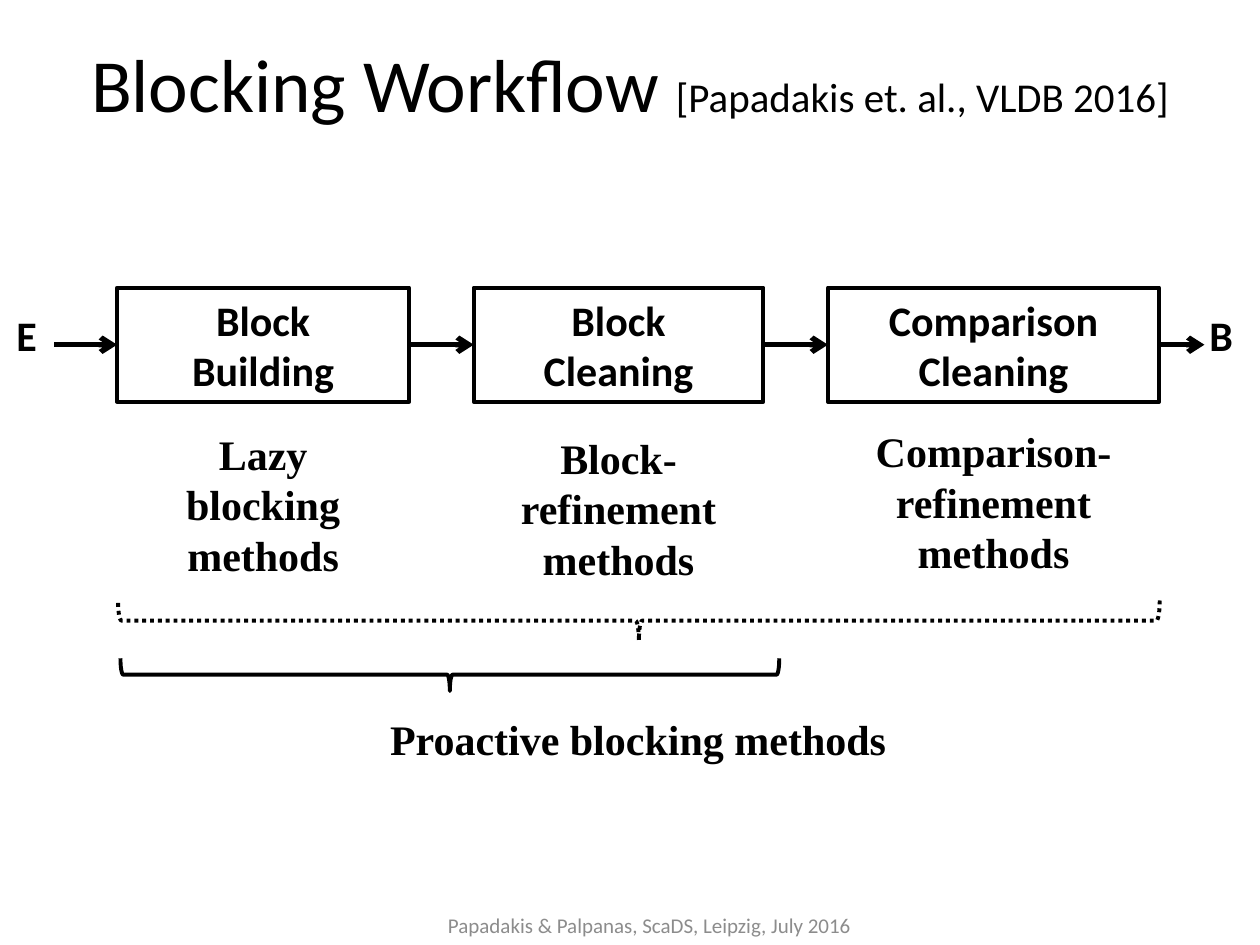
from dataclasses import dataclass

from lxml import etree
from pptx import Presentation, util as u
from pptx.dml.color import RGBColor
from pptx.enum import dml, shapes, text
from pptx.oxml import ns


@dataclass(frozen=True)
class Theme:
    """Colours, fonts and sizes of the slide."""
    ink: RGBColor = RGBColor(0, 0, 0)
    muted: RGBColor = RGBColor(0x8C, 0x8C, 0x8C)
    sans: str = "Calibri"
    serif: str = "Times New Roman"
    title: float = 42.9
    citation: float = 23.4
    body: float = 24
    footer: float = 12
    outline: float = 2.25
    arrow: float = 3


THEME = Theme()
CENTER = text.PP_ALIGN.CENTER
TOP = text.MSO_ANCHOR.TOP
MIDDLE = text.MSO_ANCHOR.MIDDLE
STAGE_TOP, STAGE_HEIGHT = 5.8, 2.3
FLOW_Y = STAGE_TOP + STAGE_HEIGHT / 2
STAGES = [
    (2.36, 5.89, ["Block", "Building"], 8.51, ["Lazy", "blocking", "methods"]),
    (9.55, 5.84, ["Block", "Cleaning"], 8.59, ["Block-refinement", "methods"]),
    (16.69, 6.68, ["Comparison", "Cleaning"], 8.46,
     ["Comparison-refinement", "methods"]),
]


def apply(target, **values):
    """Set each given attribute on the target."""
    for attribute, value in values.items():
        setattr(target, attribute, value)


def style_run(run, size, face=THEME.sans, bold=False, color=THEME.ink):
    """Format the font of one run."""
    apply(run.font, size=u.Pt(size), name=face, bold=bold)
    run.font.color.rgb = color


def write(frame, lines, align=CENTER, anchor=TOP, **style):
    """Write one paragraph per line into a text frame."""
    apply(frame, word_wrap=True, vertical_anchor=anchor)
    for index, line in enumerate(lines):
        paragraph = frame.add_paragraph() if index else frame.paragraphs[0]
        paragraph.alignment = align
        run = paragraph.add_run()
        run.text = line
        style_run(run, **style)


def add_label(slide, place, lines, **style):
    """Add a text box at a place given in centimetres."""
    label = slide.shapes.add_textbox(*map(u.Cm, place))
    write(label.text_frame, lines, **style)


def add_outline(slide, kind, place, dash=None):
    """Add an unfilled preset shape with a black outline."""
    outline = slide.shapes.add_shape(kind, *map(u.Cm, place))
    outline.shadow.inherit = False
    outline.fill.background()
    outline.line.color.rgb = THEME.ink
    apply(outline.line, width=u.Pt(THEME.outline), dash_style=dash)
    return outline


def add_stage(slide, left, width, lines):
    """Add one step of the workflow."""
    stage = add_outline(slide, shapes.MSO_SHAPE.RECTANGLE,
                        (left, STAGE_TOP, width, STAGE_HEIGHT))
    write(stage.text_frame, lines, anchor=MIDDLE, size=THEME.body, bold=True)
    return stage


def add_brace(slide, center_x, center_y, span, depth, dash=None):
    """Add a brace that points down, placed by its centre."""
    brace = add_outline(slide, shapes.MSO_SHAPE.LEFT_BRACE,
                        (center_x - depth / 2, center_y - span / 2, depth, span),
                        dash)
    brace.rotation = 270


def add_arrow(slide, start_x=0, end_x=0, source=None, target=None):
    """Add a flow arrow, joined to the stages it touches."""
    arrow = slide.shapes.add_connector(
        shapes.MSO_CONNECTOR.STRAIGHT,
        *map(u.Cm, (start_x, FLOW_Y, end_x, FLOW_Y)))
    if source:
        arrow.begin_connect(source, 3)
    if target:
        arrow.end_connect(target, 1)
    arrow.line.color.rgb = THEME.ink
    arrow.line.width = u.Pt(THEME.arrow)
    etree.SubElement(arrow.line._get_or_add_ln(), ns.qn("a:tailEnd"), type="arrow")
    etree.SubElement(arrow._element.spPr, ns.qn("a:effectLst"))


def set_title(slide, heading, citation):
    """Fill the title placeholder with a heading and its citation."""
    title = slide.shapes.title
    apply(title, left=0, top=0, width=u.Cm(25.4), height=u.Cm(3.33))
    write(title.text_frame, [heading], anchor=MIDDLE, size=THEME.title)
    source = title.text_frame.paragraphs[0].add_run()
    source.text = citation
    style_run(source, THEME.citation)


def main():
    """Build the slide and save it."""
    deck = Presentation()
    apply(deck, slide_width=u.Cm(25.4), slide_height=u.Cm(19.05))
    slide = deck.slides.add_slide(deck.slide_layouts[5])
    set_title(slide, "Blocking Workflow ", "[Papadakis et. al., VLDB 2016]")

    bold = {"size": THEME.body, "bold": True}
    methods = {**bold, "face": THEME.serif}
    flow = []
    for left, width, name, method_top, method in STAGES:
        flow.append(add_stage(slide, left, width, name))
        add_label(slide, (left, method_top, width, 3.33), method, **methods)

    add_arrow(slide, start_x=1.09, target=flow[0])
    for source, target in zip(flow, flow[1:]):
        add_arrow(slide, source=source, target=target)
    add_arrow(slide, end_x=24.28, source=flow[-1])
    for left, width, symbol in [(0.08, 0.99, "E"), (24.13, 1.12, "B")]:
        add_label(slide, (left, 6.12, width, 1.27), [symbol],
                  align=text.PP_ALIGN.LEFT, **bold)

    add_brace(slide, 12.88, 12.51, 21, 0.81, dml.MSO_LINE.ROUND_DOT)
    add_brace(slide, 9.07, 13.6, 13.28, 0.66)
    add_label(slide, (4.47, 14.25, 16.79, 1.27),
              ["Proactive blocking methods"], **methods)
    add_label(slide, (8.69, 18.14, 8.81, 1.02),
              ["Papadakis & Palpanas, ScaDS, Leipzig, July 2016"],
              anchor=MIDDLE, size=THEME.footer, color=THEME.muted)
    deck.save("out.pptx")


if __name__ == "__main__":
    main()
